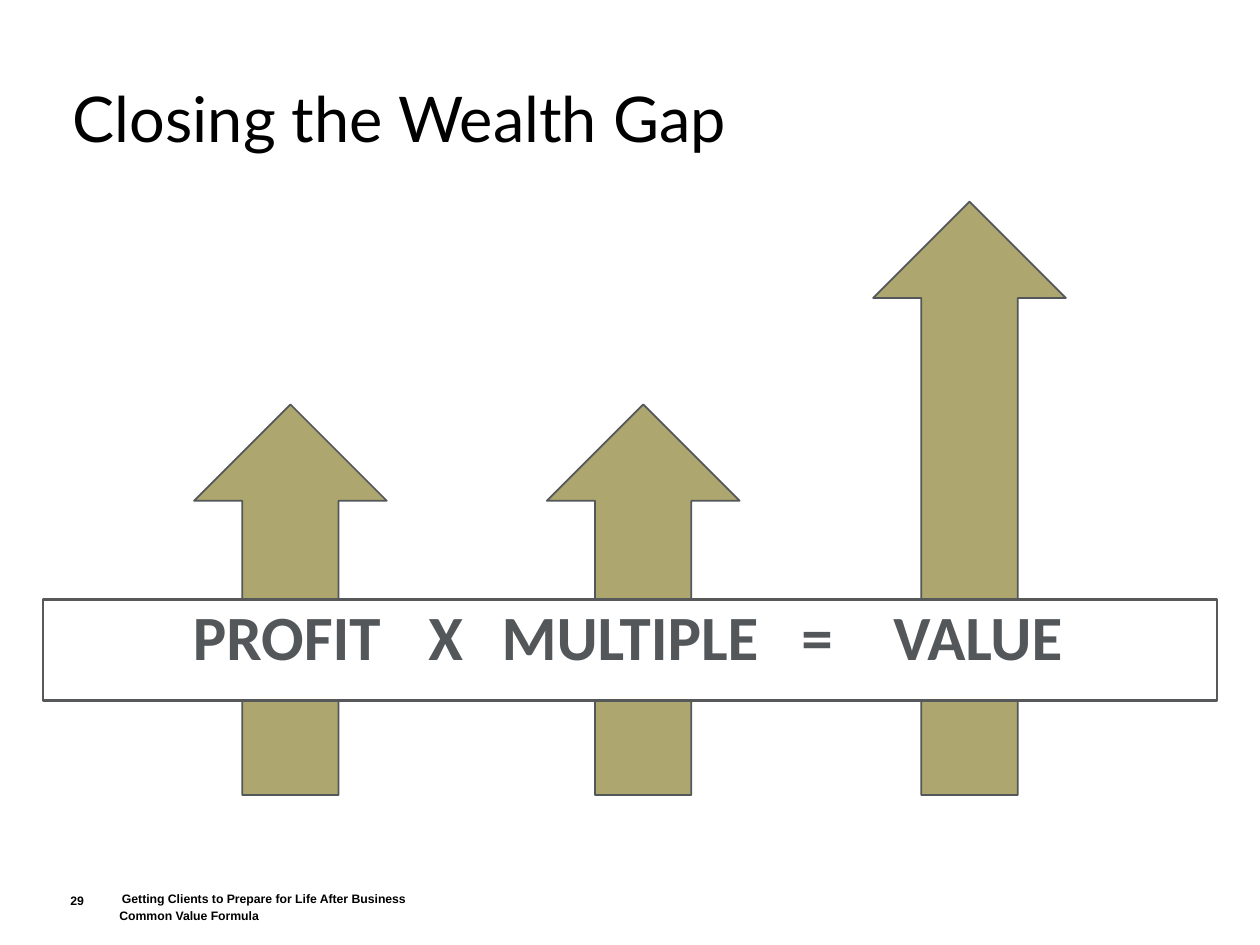
from lxml import etree
from pptx import Presentation
from pptx import util as u
from pptx.dml.color import RGBColor
from pptx.enum import shapes, text
from pptx.oxml.ns import qn


class Theme:
    black, white = "000000", "FFFFFF"
    olive, slate, border = "ADA66F", "54575A", "56585A"
    title_font, formula_font, footer_font = "Lato", "Calibri", "Arial"
    large, small = 36, 7


TITLE = ("Closing the Wealth Gap", (0.48, 0.58, 8.62, 0.98))
FOOTERS = [
    ("29", (0.46, 7.02, 0.39, 0.25)),
    ("Getting Clients to Prepare for Life After Business", (0.87, 7.01, 3.24, 0.25)),
    ("Common Value Formula", (0.85, 7.14, 5.04, 0.25)),
]
ARROWS = [(1.54, 3.21), (4.34, 3.21), (6.93, 1.6)]  # left, tip
ARROW_WIDTH, ARROW_BASE = 1.53, 6.31
BAR = (0.34, 4.76, 9.32, 0.8)
# Each term of the formula with the slide position where it starts
FORMULA = [("PROFIT", 1.53), ("X", 3.4), ("MULTIPLE", 3.98), ("=", 6.36), ("VALUE", 7.09)]


def inches(values):
    return [u.Inches(value) for value in values]


def add_span(para, wording, font, size, color, bold=False):
    span = para.add_run()
    span.text = wording
    span.font.name, span.font.size, span.font.bold = font, u.Pt(size), bold
    span.font.color.rgb = RGBColor.from_string(color)


def add_label(page, wording, place, anchor, font, size, bold=False):
    frame = page.shapes.add_textbox(*inches(place)).text_frame
    frame.word_wrap = True
    frame.vertical_anchor = anchor
    add_span(frame.paragraphs[0], wording, font, size, Theme.black, bold)


def add_block(page, kind, place, fill, line, weight):
    block = page.shapes.add_shape(kind, *inches(place))
    block.shadow.inherit = False
    block.fill.solid()
    block.fill.fore_color.rgb = RGBColor.from_string(fill)
    block.line.color.rgb = RGBColor.from_string(line)
    block.line.width = u.Pt(weight)
    return block


def add_formula(page):
    """Draw the bar and line its terms up with tab stops."""
    bar = add_block(page, shapes.MSO_SHAPE.RECTANGLE, BAR, Theme.white, Theme.border, 1.5)
    start = FORMULA[0][1]
    frame = bar.text_frame
    frame.word_wrap = True
    frame.vertical_anchor = text.MSO_ANCHOR.TOP
    frame.margin_left = u.Inches(start - BAR[0])
    para = frame.paragraphs[0]
    stops = etree.SubElement(para._p.get_or_add_pPr(), qn("a:tabLst"))
    for _, left in FORMULA[1:]:
        etree.SubElement(stops, qn("a:tab"), pos=str(u.Inches(left - start)), algn="l")
    para.alignment = text.PP_ALIGN.LEFT
    para.line_spacing = 0.9
    wording = "\t".join(term for term, _ in FORMULA)
    add_span(para, wording, Theme.formula_font, Theme.large, Theme.slate, True)


def main():
    deck = Presentation()
    deck.slide_width, deck.slide_height = inches((10, 7.5))
    page = deck.slides.add_slide(deck.slide_layouts[6])
    add_label(page, *TITLE, text.MSO_ANCHOR.TOP, Theme.title_font, Theme.large)
    for wording, place in FOOTERS:
        add_label(page, wording, place, text.MSO_ANCHOR.MIDDLE,
                  Theme.footer_font, Theme.small, True)
    for left, tip in ARROWS:
        place = (left, tip, ARROW_WIDTH, ARROW_BASE - tip)
        add_block(page, shapes.MSO_SHAPE.UP_ARROW, place, Theme.olive, Theme.slate, 1)
    add_formula(page)
    deck.save("out.pptx")


if __name__ == "__main__":
    main()
